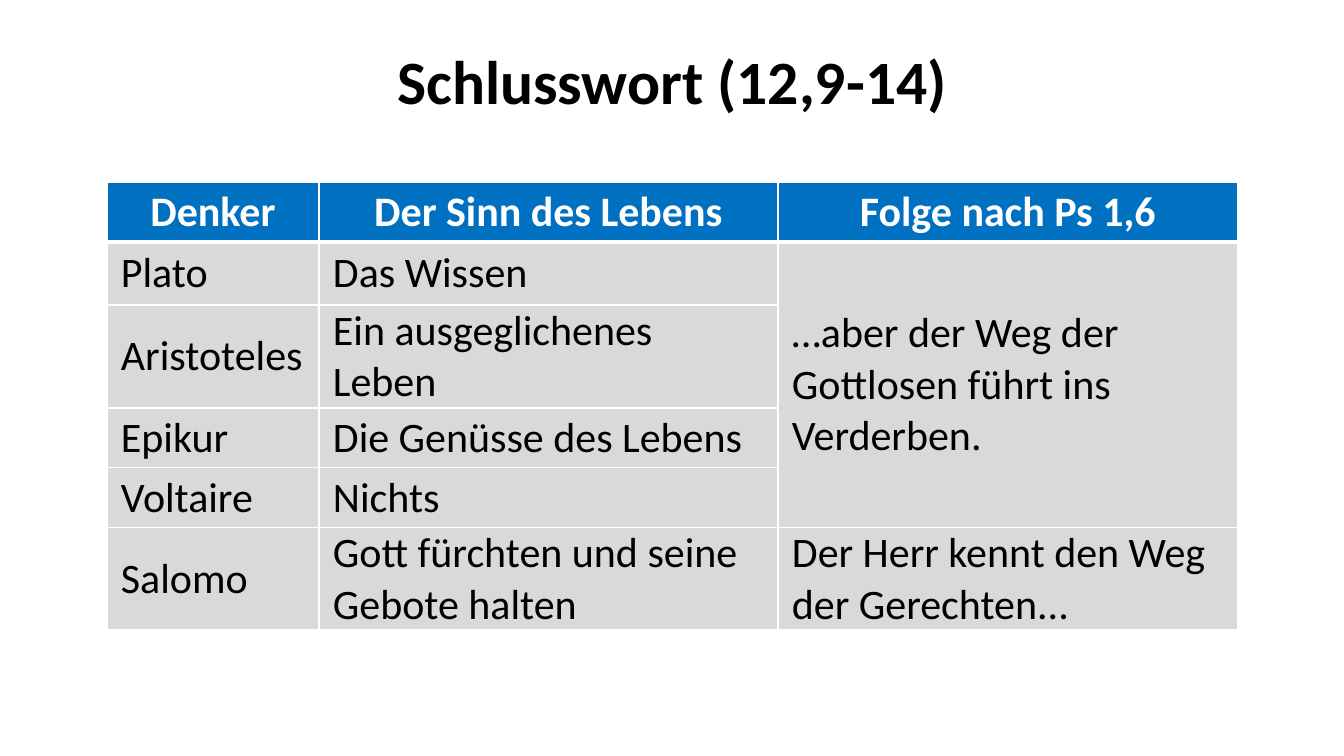
from lxml import etree
from pptx import Presentation
from pptx import util as u
from pptx.dml.color import RGBColor
from pptx.enum import text
from pptx.oxml.ns import qn

TITLE = "Schlusswort (12,9-14)"
HEADINGS = ["Denker", "Der Sinn des Lebens", "Folge nach Ps 1,6"]
THINKERS = [
    ("Plato", "Das Wissen", "…aber der Weg der Gottlosen führt ins Verderben."),
    ("Aristoteles", "Ein ausgeglichenes Leben", None),
    ("Epikur", "Die Genüsse des Lebens", None),
    ("Voltaire", "Nichts", None),
    ("Salomo", "Gott fürchten und seine Gebote halten",
     "Der Herr kennt den Weg\nder Gerechten..."),
]
SLIDE_SIZE = (1344, 756)
TITLE_BOX = (93, 40, 1159, 90)
TABLE_CORNER = (107, 182)
COLUMN_WIDTHS = [212, 459, 460]
ROW_HEIGHTS = [60, 63, 103, 60, 60, 102]
CELL_INSET = 14

FONT = "Calibri"
BLACK = RGBColor(0, 0, 0)
WHITE = RGBColor(255, 255, 255)
BLUE = RGBColor(0, 112, 192)
GREY = RGBColor(217, 217, 217)


def px(length):
    return u.Emu(round(length * 914400 / 100.8))


def write(frame, content, size=30, color=BLACK, bold=False,
          align=text.PP_ALIGN.LEFT, spacing=1.0):
    frame.word_wrap = True
    frame.text = content
    for paragraph in frame.paragraphs:
        paragraph.alignment = align
        paragraph.line_spacing = spacing
        for run in paragraph.runs:
            run.font.name = FONT
            run.font.size = u.Pt(size)
            run.font.bold = bold
            run.font.color.rgb = color


def draw_borders(cell, **widths):
    properties = cell._tc.get_or_add_tcPr()
    for position, (side, width) in enumerate(widths.items()):
        line = etree.Element(qn(f"a:ln{side}"), w=str(u.Pt(width)))
        fill = etree.SubElement(line, qn("a:solidFill"))
        etree.SubElement(fill, qn("a:srgbClr"), val=str(WHITE))
        properties.insert(position, line)


def add_title(slide):
    frame = slide.shapes.add_textbox(*map(px, TITLE_BOX)).text_frame
    frame.vertical_anchor = text.MSO_ANCHOR.MIDDLE
    write(frame, TITLE, size=44, bold=True,
          align=text.PP_ALIGN.CENTER, spacing=0.9)


def add_thinkers(slide):
    rows = [HEADINGS, *THINKERS]
    size = sum(COLUMN_WIDTHS), sum(ROW_HEIGHTS)
    table = slide.shapes.add_table(
        len(rows), len(HEADINGS), *map(px, TABLE_CORNER + size)).table
    for column, width in zip(table.columns, COLUMN_WIDTHS):
        column.width = px(width)
    for row, height in zip(table.rows, ROW_HEIGHTS):
        row.height = px(height)

    for row_index, row in enumerate(rows):
        heading = row_index == 0
        for column_index, content in enumerate(row):
            cell = table.cell(row_index, column_index)
            cell.fill.solid()
            cell.fill.fore_color.rgb = BLUE if heading else GREY
            cell.vertical_anchor = text.MSO_ANCHOR.MIDDLE
            cell.margin_left = cell.margin_right = px(CELL_INSET)
            cell.margin_top = cell.margin_bottom = 0
            draw_borders(cell, L=1, R=1, T=3 if row_index == 1 else 1,
                         B=3 if heading else 1)
            if heading:
                write(cell.text_frame, content, color=WHITE, bold=True,
                      align=text.PP_ALIGN.CENTER)
            elif content:
                write(cell.text_frame, content)
    table.cell(1, 2).merge(table.cell(4, 2))


def main():
    presentation = Presentation()
    presentation.slide_width, presentation.slide_height = map(px, SLIDE_SIZE)
    slide = presentation.slides.add_slide(presentation.slide_layouts[6])
    add_title(slide)
    add_thinkers(slide)
    presentation.save("out.pptx")


if __name__ == "__main__":
    main()
